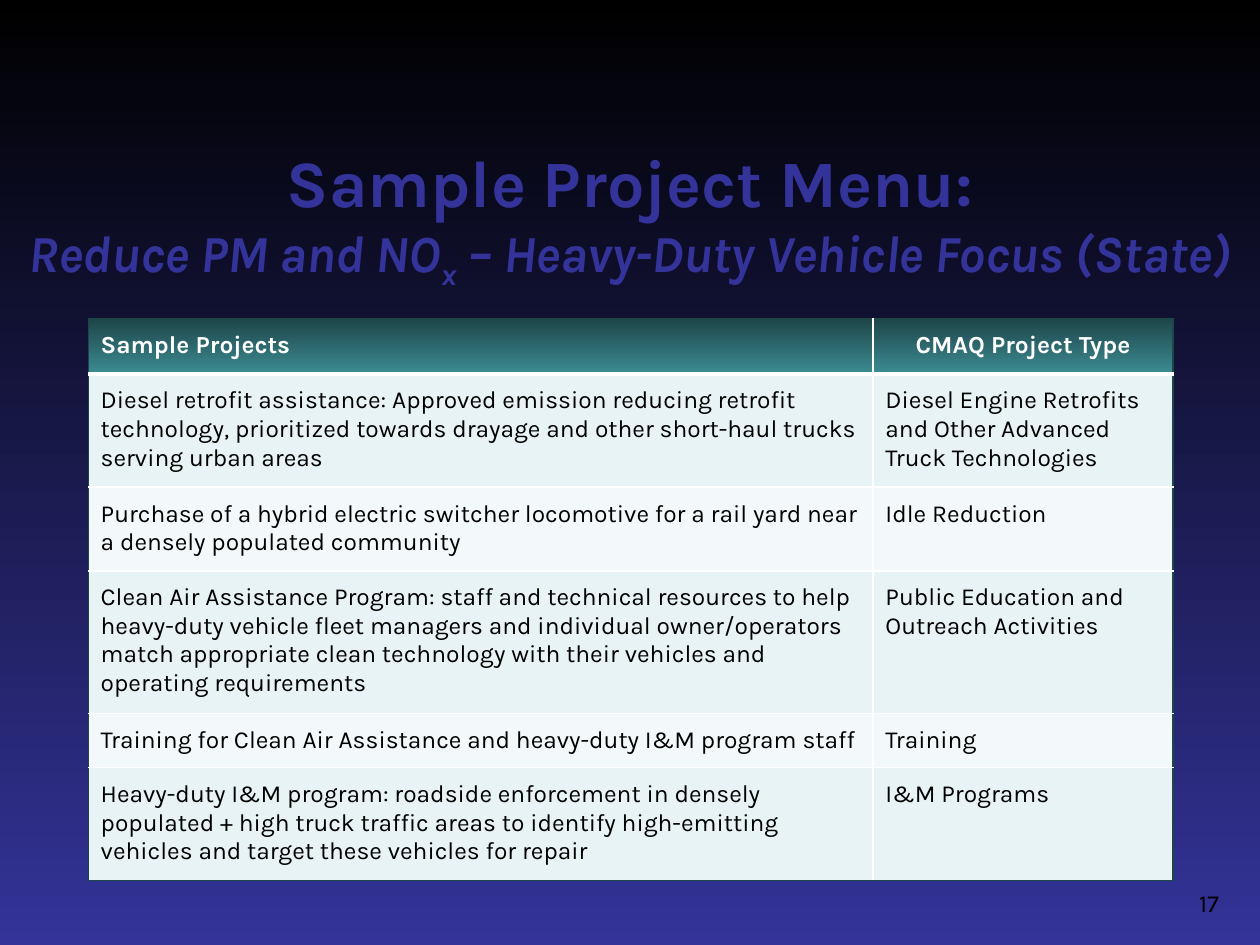
from dataclasses import dataclass

from lxml import etree
from pptx import Presentation
from pptx import util as u
from pptx.dml.color import RGBColor
from pptx.enum import text
from pptx.oxml.ns import qn


@dataclass(frozen=True)
class Theme:
    """Colours and type sizes of the slide."""
    font: str = "Karla"
    black: str = "000000"
    white: str = "FFFFFF"
    blue: str = "333399"
    edge: str = "1E4649"
    teal: str = "3C8C93"
    bands: tuple = ("E7F3F4", "F3F9FA")
    title_size: float = 37.8
    subtitle_size: float = 29.7
    body_size: float = 14


HEADER = ("Sample Projects", "CMAQ Project Type")
PROJECTS = [
    ("Diesel retrofit assistance: Approved emission reducing retrofit technology, "
     "prioritized towards drayage and other short-haul trucks serving urban areas",
     "Diesel Engine Retrofits and Other Advanced Truck Technologies"),
    ("Purchase of a hybrid electric switcher locomotive for a rail yard near "
     "a densely populated community", "Idle Reduction"),
    ("Clean Air Assistance Program: staff and technical resources to help heavy-duty "
     "vehicle fleet managers and individual owner/operators match appropriate clean "
     "technology with their vehicles and operating requirements",
     "Public Education and Outreach Activities"),
    ("Training for Clean Air Assistance and heavy-duty I&M program staff", "Training"),
    ("Heavy-duty I&M program: roadside enforcement in densely populated + high truck "
     "traffic areas to identify high-emitting vehicles and target these vehicles for repair",
     "I&M Programs"),
]
SUBTITLE = [("Reduce PM and NO", 0, -20), ("x", -25000, -20),
            (" – Heavy-Duty Vehicle Focus ", 0, -20), ("(State)", 0, 0)]
COLUMN_WIDTHS = (15.82, 6.05)
ROW_HEIGHTS = (1.11, 2.24, 1.65, 2.82, 1.09, 2.21)


class SlideBuilder:
    """Draws styled elements on the current slide."""

    def __init__(self, presentation, theme):
        self.theme = theme
        self.slide = presentation.slides.add_slide(presentation.slide_layouts[5])

    def style(self, paragraph, size, color, bold=False, align=text.PP_ALIGN.LEFT):
        """Format a whole paragraph."""
        paragraph.alignment = align
        font = paragraph.font
        font.name, font.size, font.bold = self.theme.font, u.Pt(size), bold
        font.color.rgb = RGBColor.from_string(color)

    def gradient(self, fill, top, bottom):
        """Apply a vertical two-colour gradient."""
        fill.gradient()
        fill.gradient_angle = 270
        for stop, color in zip(fill.gradient_stops, (top, bottom)):
            stop.color.rgb = RGBColor.from_string(color)

    def background(self):
        """Fill the slide background."""
        self.gradient(self.slide.background.fill, self.theme.black, self.theme.blue)

    def title(self, heading, subtitle, left, top, width, height):
        """Fill the title placeholder with a heading and an italic second line."""
        shape = self.slide.shapes.title
        shape.left, shape.top = u.Cm(left), u.Cm(top)
        shape.width, shape.height = u.Cm(width), u.Cm(height)
        frame = shape.text_frame
        frame.auto_size = text.MSO_AUTO_SIZE.NONE
        frame.vertical_anchor = text.MSO_ANCHOR.MIDDLE
        paragraph = frame.paragraphs[0]
        self.style(paragraph, self.theme.title_size, self.theme.blue, True,
                   text.PP_ALIGN.CENTER)
        paragraph.add_run().text = heading
        paragraph.add_line_break()
        for wording, baseline, spacing in subtitle:
            run = paragraph.add_run()
            run.text = wording
            run.font.size, run.font.italic = u.Pt(self.theme.subtitle_size), True
            properties = run.font._element
            properties.set("baseline", str(baseline))
            properties.set("spc", str(spacing))

    def page_number(self, number, left, top, width, height):
        """Add the right-aligned slide number."""
        shape = self.slide.shapes.add_textbox(u.Cm(left), u.Cm(top), u.Cm(width), u.Cm(height))
        shape.text_frame.word_wrap = True
        paragraph = shape.text_frame.paragraphs[0]
        paragraph.text = number
        self.style(paragraph, self.theme.body_size, self.theme.black,
                   align=text.PP_ALIGN.RIGHT)

    def border(self, cell, side, color, width):
        """Draw one cell border."""
        line = etree.SubElement(cell._tc.get_or_add_tcPr(), qn(f"a:ln{side}"),
                                w=str(u.Pt(width)))
        fill = etree.SubElement(line, qn("a:solidFill"))
        etree.SubElement(fill, qn("a:srgbClr"), val=color)

    def table(self, rows, left, top, widths, heights):
        """Add a banded table with a gradient header and a dark outer frame."""
        table = self.slide.shapes.add_table(
            len(rows), len(widths), u.Cm(left), u.Cm(top),
            u.Cm(sum(widths)), u.Cm(sum(heights))).table
        for column, width in zip(table.columns, widths):
            column.width = u.Cm(width)
        for row, height in zip(table.rows, heights):
            row.height = u.Cm(height)
        last_row, last_column = len(rows) - 1, len(widths) - 1
        for r, wordings in enumerate(rows):
            for c, wording in enumerate(wordings):
                outer = {"L": c == 0, "R": c == last_column, "T": r == 0, "B": r == last_row}
                heavy = {"T": r == 1, "B": r == 0}
                self.cell(table.cell(r, c), wording, r, c, outer, heavy)

    def cell(self, cell, wording, row, column, outer, heavy):
        """Write, frame and fill one table cell."""
        theme, header = self.theme, row == 0
        cell.margin_left = cell.margin_right = u.Cm(0.25)
        cell.margin_top = cell.margin_bottom = u.Cm(0.25)
        paragraph = cell.text_frame.paragraphs[0]
        paragraph.text = wording
        centred = header and column > 0
        self.style(paragraph, theme.body_size, theme.white if header else theme.black,
                   header, text.PP_ALIGN.CENTER if centred else text.PP_ALIGN.LEFT)
        for side, is_outer in outer.items():
            self.border(cell, side, theme.edge if is_outer else theme.white,
                        3 if heavy.get(side) else 1)
        if header:
            self.gradient(cell.fill, theme.edge, theme.teal)
        else:
            cell.fill.solid()
            cell.fill.fore_color.rgb = RGBColor.from_string(theme.bands[(row - 1) % 2])


def main():
    presentation = Presentation()
    presentation.slide_width, presentation.slide_height = u.Cm(25.4), u.Cm(19.05)
    builder = SlideBuilder(presentation, Theme())
    builder.background()
    builder.title("Sample Project Menu:", SUBTITLE, 0, 3.02, 25.4, 2.67)
    builder.page_number("17", 18.9, 17.78, 5.92, 1.32)
    builder.table([HEADER, *PROJECTS], 1.78, 6.43, COLUMN_WIDTHS, ROW_HEIGHTS)
    presentation.save("out.pptx")


if __name__ == "__main__":
    main()
